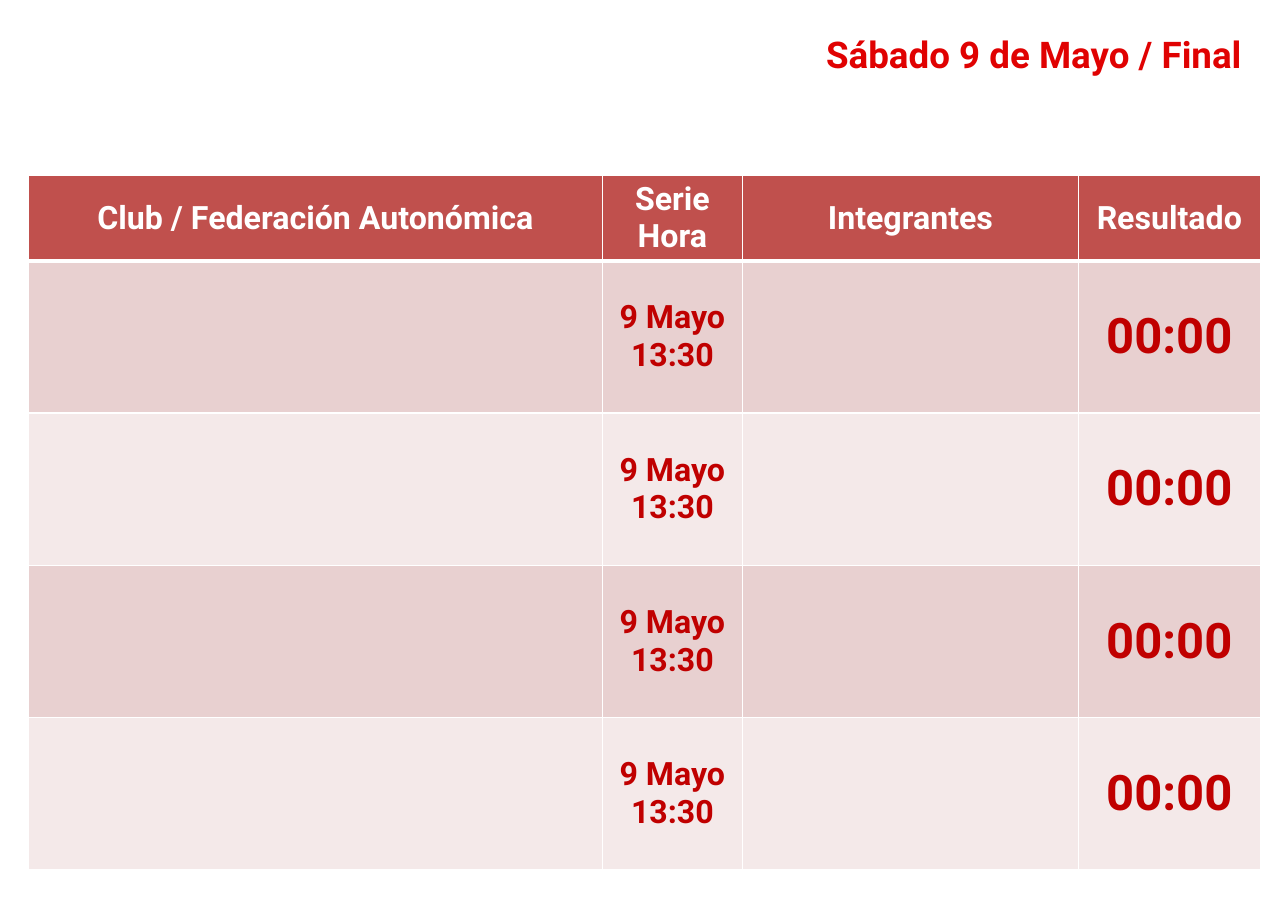
from dataclasses import dataclass

from lxml.etree import SubElement
from pptx import Presentation
from pptx.dml.color import RGBColor
from pptx.enum.text import MSO_ANCHOR, PP_ALIGN
from pptx.oxml.ns import qn
from pptx.util import Cm, Pt


@dataclass(frozen=True)
class Theme:
    font: str = "Roboto"
    title: str = "E00202"
    header: str = "C0504D"
    bands: tuple = ("E8D0D0", "F4E9E9")
    white: str = "FFFFFF"
    entry: str = "C00000"
    title_size: int = 24
    body_size: int = 21
    result_size: int = 32
    thin: int = 1
    thick: int = 3


THEME = Theme()
HEADINGS = (("Club / Federación Autonómica",), ("Serie", "Hora"),
            ("Integrantes",), ("Resultado",))
ENTRY = ((), ("9 Mayo", "13:30"), (), ("00:00",))
ENTRY_COUNT = 4
COLUMN_WIDTHS = (13.23, 3.23, 7.75, 4.19)
HEADER_HEIGHT, ENTRY_HEIGHT = 1.96, 3.51


def add_lines(tf, lines, size, color, align):
    """Write each line as its own bold paragraph."""
    for i, line in enumerate(lines):
        p = tf.add_paragraph() if i else tf.paragraphs[0]
        p.alignment = align
        r = p.add_run()
        r.text = line
        r.font.name = THEME.font
        r.font.size = Pt(size)
        r.font.bold = True
        r.font.color.rgb = RGBColor.from_string(color)


def add_title(s, text):
    tf = s.shapes.add_textbox(Cm(14.17), Cm(0.61), Cm(14.71), Cm(1.27)).text_frame
    tf.word_wrap = True
    add_lines(tf, (text,), THEME.title_size, THEME.title, PP_ALIGN.RIGHT)


def set_borders(cell, top, bottom):
    tcPr = cell._tc.get_or_add_tcPr()
    widths = {"a:lnL": THEME.thin, "a:lnR": THEME.thin, "a:lnT": top, "a:lnB": bottom}
    for tag, width in widths.items():
        ln = SubElement(tcPr, qn(tag), w=str(Pt(width)))
        SubElement(SubElement(ln, qn("a:solidFill")), qn("a:srgbClr"), val=THEME.white)


def fill_cell(cell, lines, size, color, fill, top, bottom):
    set_borders(cell, top, bottom)
    cell.fill.solid()
    cell.fill.fore_color.rgb = RGBColor.from_string(fill)
    cell.vertical_anchor = MSO_ANCHOR.MIDDLE
    cell.margin_top = cell.margin_bottom = Cm(0.1)
    add_lines(cell.text_frame, lines, size, color, PP_ALIGN.CENTER)


def add_results_table(s):
    heights = [HEADER_HEIGHT] + [ENTRY_HEIGHT] * ENTRY_COUNT
    table = s.shapes.add_table(len(heights), len(COLUMN_WIDTHS), Cm(0.66), Cm(4.05),
                               Cm(sum(COLUMN_WIDTHS)), Cm(sum(heights))).table
    table.horz_banding = False
    for column, width in zip(table.columns, COLUMN_WIDTHS):
        column.width = Cm(width)
    for row, height in zip(table.rows, heights):
        row.height = Cm(height)

    # Header row
    for col, lines in enumerate(HEADINGS):
        fill_cell(table.cell(0, col), lines, THEME.body_size, THEME.white,
                  THEME.header, THEME.thin, THEME.thick)

    # Entry rows in alternating bands
    result_col = len(ENTRY) - 1
    for row in range(1, ENTRY_COUNT + 1):
        band = THEME.bands[(row - 1) % 2]
        top = THEME.thick if row == 1 else THEME.thin
        for col, lines in enumerate(ENTRY):
            size = THEME.result_size if col == result_col else THEME.body_size
            fill_cell(table.cell(row, col), lines, size, THEME.entry, band,
                      top, THEME.thin)


def main():
    prs = Presentation()
    prs.slide_width, prs.slide_height = Cm(29.7), Cm(21)
    s = prs.slides.add_slide(prs.slide_layouts[6])
    add_results_table(s)
    add_title(s, "Sábado 9 de Mayo / Final")
    prs.save("out.pptx")


if __name__ == "__main__":
    main()
